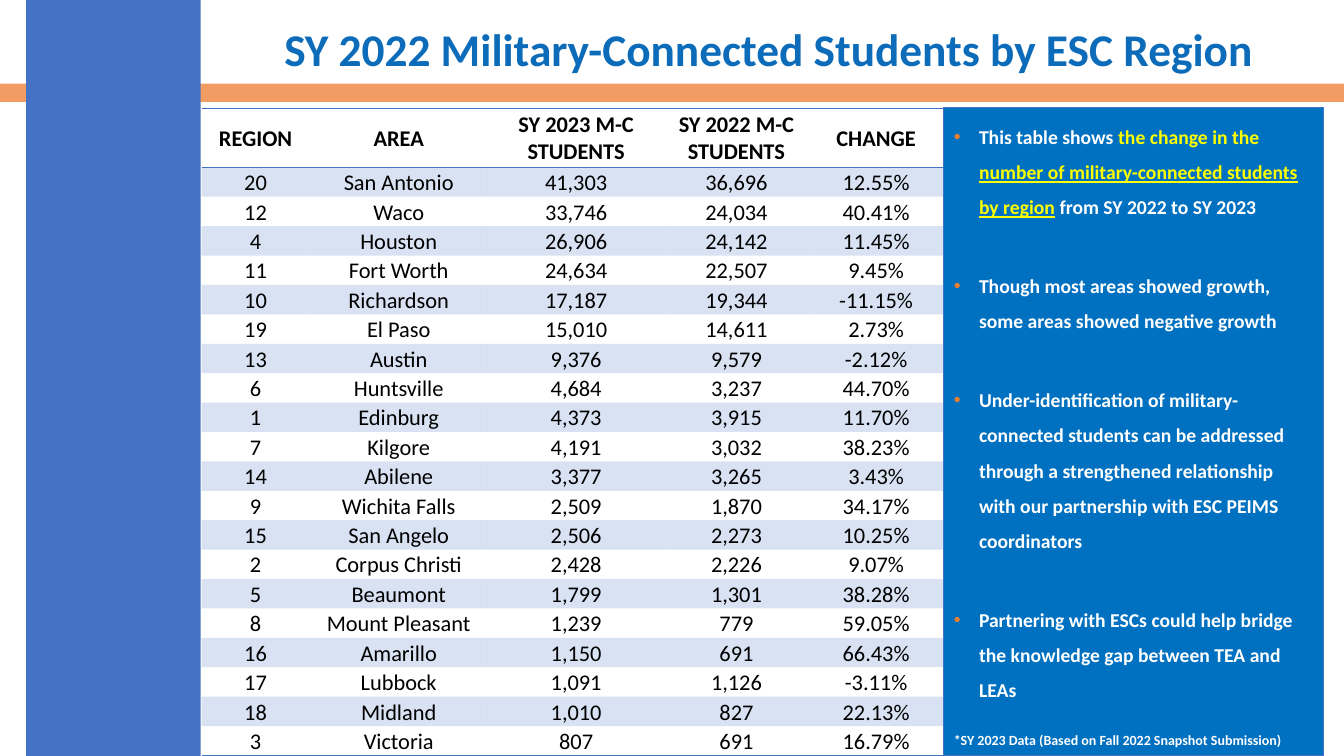
from lxml.etree import SubElement
from pptx import Presentation
from pptx.dml.color import RGBColor
from pptx.enum.shapes import MSO_SHAPE
from pptx.enum.text import MSO_ANCHOR, MSO_AUTO_SIZE, PP_ALIGN
from pptx.oxml.ns import qn
from pptx.util import Inches, Pt

COLORS = {
    "blue": "4472C4", "title": "0D6CB9", "panel": "0070C0", "orange": "ED7D31",
    "white": "FFFFFF", "yellow": "FFFF00", "black": "000000",
}
PLAIN = "{2D5ABB26-0587-4C30-8999-92F81FD0307C}"
WIDTHS = [1.07, 1.77, 1.75, 1.43, 1.34]
HEAD = ["REGION", "AREA", "SY 2023 M-C STUDENTS", "SY 2022 M-C STUDENTS", "CHANGE"]
ROWS = [
    ["20", "San Antonio", "41,303", "36,696", "12.55%"],
    ["12", "Waco", "33,746", "24,034", "40.41%"],
    ["4", "Houston", "26,906", "24,142", "11.45%"],
    ["11", "Fort Worth", "24,634", "22,507", "9.45%"],
    ["10", "Richardson", "17,187", "19,344", "-11.15%"],
    ["19", "El Paso", "15,010", "14,611", "2.73%"],
    ["13", "Austin", "9,376", "9,579", "-2.12%"],
    ["6", "Huntsville", "4,684", "3,237", "44.70%"],
    ["1", "Edinburg", "4,373", "3,915", "11.70%"],
    ["7", "Kilgore", "4,191", "3,032", "38.23%"],
    ["14", "Abilene", "3,377", "3,265", "3.43%"],
    ["9", "Wichita Falls", "2,509", "1,870", "34.17%"],
    ["15", "San Angelo", "2,506", "2,273", "10.25%"],
    ["2", "Corpus Christi", "2,428", "2,226", "9.07%"],
    ["5", "Beaumont", "1,799", "1,301", "38.28%"],
    ["8", "Mount Pleasant", "1,239", "779", "59.05%"],
    ["16", "Amarillo", "1,150", "691", "66.43%"],
    ["17", "Lubbock", "1,091", "1,126", "-3.11%"],
    ["18", "Midland", "1,010", "827", "22.13%"],
    ["3", "Victoria", "807", "691", "16.79%"],
]
POINTS = [
    [("This table shows ", {}),
     ("the change in the ", {"color": "yellow"}),
     ("number of military-connected students by region",
      {"color": "yellow", "line": True}),
     (" from SY 2022 to SY 2023", {})],
    [("Though most areas showed growth, some areas showed negative growth", {})],
    [("Under-identification of military-connected students can be addressed "
      "through a strengthened relationship with our partnership with ESC PEIMS "
      "coordinators", {})],
    [("Partnering with ESCs could help bridge the knowledge gap between TEA "
      "and LEAs", {})],
]
NOTE = "*SY 2023 Data (Based on Fall 2022 Snapshot Submission)"


def rgb(name):
    return RGBColor.from_string(COLORS[name])


def write(para, text, size=14, color="white", bold=True, line=False):
    run = para.add_run()
    run.text = text
    font = run.font
    font.name, font.size, font.bold = "Calibri", Pt(size), bold
    font.underline = line
    font.color.rgb = rgb(color)


def paint(fill, color, alpha=100):
    fill.solid()
    fill.fore_color.rgb = rgb(color)
    if alpha < 100:
        tone = fill._xPr.find(".//" + qn("a:srgbClr"))
        SubElement(tone, qn("a:alpha"), val=str(alpha * 1000))


def place(shape, left, top, width, height):
    shape.left, shape.top = Inches(left), Inches(top)
    shape.width, shape.height = Inches(width), Inches(height)


def add_bar(slide, box, color, alpha=100):
    bar = slide.shapes.add_shape(MSO_SHAPE.RECTANGLE, *map(Inches, box))
    bar.shadow.inherit = False
    bar.line.fill.background()
    paint(bar.fill, color, alpha)


def add_title(slide, text):
    title = slide.shapes.title
    place(title, 2.42, 0.22, 10.41, 0.59)
    frame = title.text_frame
    frame.auto_size = MSO_AUTO_SIZE.NONE
    frame.vertical_anchor = MSO_ANCHOR.MIDDLE
    para = frame.paragraphs[0]
    para.alignment, para.line_spacing = PP_ALIGN.CENTER, 0.9
    write(para, text, size=32.4, color="title")


def set_bullet(para):
    props = para._p.get_or_add_pPr()
    props.set("marL", str(Inches(0.25)))
    props.set("indent", str(-Inches(0.25)))
    tint = SubElement(props, qn("a:buClr"))
    SubElement(tint, qn("a:srgbClr"), val=COLORS["orange"])
    SubElement(props, qn("a:buFont"), typeface="Arial")
    SubElement(props, qn("a:buChar"), char="•")


def add_panel(slide):
    panel = slide.placeholders[1]
    place(panel, 9.36, 1.07, 3.77, 6.43)
    paint(panel.fill, "panel")
    panel.line.color.rgb, panel.line.width = rgb("blue"), Pt(0.75)
    frame = panel.text_frame
    frame.auto_size, frame.word_wrap = MSO_AUTO_SIZE.NONE, True
    frame.vertical_anchor = MSO_ANCHOR.TOP
    for num, runs in enumerate(POINTS):
        para = frame.add_paragraph() if num else frame.paragraphs[0]
        set_bullet(para)
        para.line_spacing = 1.5
        para.space_before = Pt(31 if num else 0)
        for text, style in runs:
            write(para, text, **style)
    note = frame.add_paragraph()
    props = note._p.get_or_add_pPr()
    props.set("marL", "0")
    props.set("indent", "0")
    SubElement(props, qn("a:buNone"))
    note.line_spacing, note.space_before = 0.7, Pt(24.7)
    write(note, NOTE, size=10)


def add_edge(cell, side):
    edge = SubElement(cell._tc.get_or_add_tcPr(), qn("a:" + side), w=str(Pt(1)))
    fill = SubElement(edge, qn("a:solidFill"))
    SubElement(fill, qn("a:srgbClr"), val=COLORS["blue"])


def fill_cell(cell, text, row):
    cell.margin_left = cell.margin_right = cell.margin_top = Inches(0.01)
    cell.margin_bottom = 0
    cell.vertical_anchor = MSO_ANCHOR.BOTTOM if row else MSO_ANCHOR.MIDDLE
    para = cell.text_frame.paragraphs[0]
    para.alignment = PP_ALIGN.CENTER
    write(para, text, size=16, color="black", bold=row == 0)
    if row == 0:
        add_edge(cell, "lnT")
    if row in (0, len(ROWS)):
        add_edge(cell, "lnB")
    if row % 2:
        paint(cell.fill, "blue", 20)
    else:
        cell.fill.background()


def add_grid(slide):
    data = [HEAD] + ROWS
    box = map(Inches, (2, 1.08, sum(WIDTHS), 6.42))
    table = slide.shapes.add_table(len(data), len(HEAD), *box).table
    table.first_row = table.horz_banding = False
    table._tbl.tblPr.find(qn("a:tableStyleId")).text = PLAIN
    for col, width in zip(table.columns, WIDTHS):
        col.width = Inches(width)
    for num, texts in enumerate(data):
        table.rows[num].height = Inches((6.42 - 0.58) / len(ROWS) if num else 0.58)
        for col, text in enumerate(texts):
            fill_cell(table.cell(num, col), text, num)


def main():
    """Build the slide on military-connected students by region."""
    deck = Presentation()
    deck.slide_width, deck.slide_height = Inches(13.33), Inches(7.5)
    slide = deck.slides.add_slide(deck.slide_layouts[1])
    add_bar(slide, (0, 0.83, 13.33, 0.18), "orange", 76)
    add_bar(slide, (0.26, 0, 1.73, 7.5), "blue")
    add_title(slide, "SY 2022 Military-Connected Students by ESC Region")
    add_grid(slide)
    add_panel(slide)
    deck.save("out.pptx")


if __name__ == "__main__":
    main()
